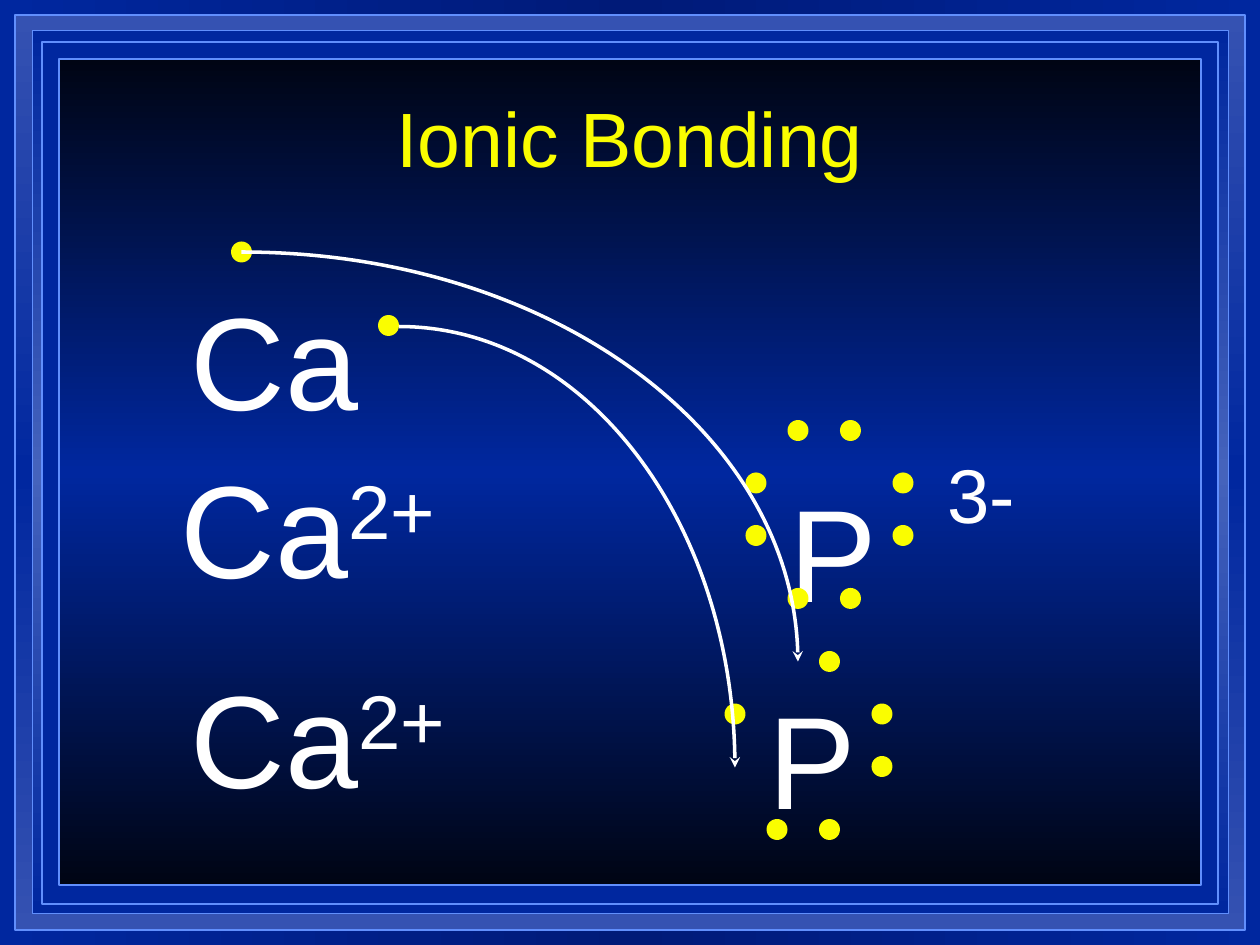
from copy import deepcopy

from lxml import etree
from pptx import Presentation
from pptx.dml.color import RGBColor
from pptx.enum.dml import MSO_PATTERN
from pptx.enum.shapes import MSO_SHAPE
from pptx.enum.text import MSO_ANCHOR, MSO_AUTO_SIZE, PP_ALIGN
from pptx.oxml.ns import qn
from pptx.util import Pt

SCALE = 7620
RECTANGLE, OVAL = MSO_SHAPE.RECTANGLE, MSO_SHAPE.OVAL
PATTERN = MSO_PATTERN.PERCENT_90
CENTER, TOP, GROW = PP_ALIGN.CENTER, MSO_ANCHOR.TOP, MSO_AUTO_SIZE.SHAPE_TO_FIT_TEXT
BLUE, EDGE, YELLOW, WHITE = "00279F", "618FFD", "FAFD00", "FFFFFF"
DOT = 20
CURVE = 0.5523

FRAMES = [
    (14, 14, 1172, 872, ("3552B2", BLUE, "3552B2")),
    (31, 29, 1139, 841, (BLUE, "4563BC", BLUE)),
    (40, 40, 1120, 821, None),
    (56, 56, 1088, 787, ("000514", BLUE, "000514")),
]
LABELS = [
    (170, 260, 200, [("Ca", 0)]),
    (160, 420, 310, [("Ca", 0), ("2+", 30)]),
    (740, 420, 272, [("P  ", 0), ("3-", 60)]),
    (170, 620, 360, [("Ca", 0), ("2+", 30)]),
    (720, 640, 200, [("P", 0)]),
]
OCTET = [(40, 0), (90, 0), (0, 50), (0, 100), (140, 50), (140, 100), (40, 160), (90, 160)]
CALCIUM_ELECTRONS = [(220, 230), (360, 300)]
ION_ORIGIN, ATOM_ORIGIN = (710, 400), (690, 620)
ATOM_GAPS = (0, 3)
TRANSFERS = [(230, 240, 760, 630), (380, 311, 700, 731)]


def px(*lengths):
    """Turn pixel lengths into EMU."""
    return [round(length * SCALE) for length in lengths]


def color(value):
    """Turn a hex string into a colour."""
    return RGBColor.from_string(value)


def apply_format(target, values):
    """Set attributes from a dict of format values."""
    for name, value in values.items():
        setattr(target, name, value)


def fill_gradient(fill, element, colors, angle):
    """Fill with a gradient of evenly spaced colours."""
    fill.gradient()
    fill.gradient_angle = angle
    stops = element.xpath(".//a:gsLst")[0]
    stops.append(deepcopy(stops[0]))
    for index, (stop, value) in enumerate(zip(fill.gradient_stops, colors)):
        stop.position = index / (len(colors) - 1)
        stop.color.rgb = color(value)


def add_frame(slide, left, top, width, height, colors):
    """Add one of the nested border panels."""
    frame = slide.shapes.add_shape(RECTANGLE, *px(left, top, width, height))
    frame.shadow.inherit = False
    if colors:
        fill_gradient(frame.fill, frame._element, colors, 90)
    else:
        frame.fill.patterned()
        frame.fill.pattern = PATTERN
        frame.fill.fore_color.rgb = frame.fill.back_color.rgb = color(BLUE)
    frame.line.color.rgb = color(EDGE)
    frame.line.width = Pt(1)


def add_span(para, text, size, value):
    """Add a run of text in the slide font."""
    span = para.add_run()
    span.text = text
    apply_format(span.font, {"name": "Arial", "size": Pt(size), "bold": False})
    span.font.color.rgb = color(value)
    return span


def format_title(slide):
    """Place the title in front of the frames and format it."""
    title = slide.shapes.title
    slide.shapes._spTree.append(title._element)
    left, top, width, height = px(90, 80, 1020, 100)
    apply_format(title, {"left": left, "top": top, "width": width, "height": height})
    apply_format(title.text_frame, {"vertical_anchor": TOP, "word_wrap": True, "auto_size": GROW})
    para = title.text_frame.paragraphs[0]
    para.alignment = CENTER
    add_span(para, "Ionic Bonding", 44, YELLOW)


def add_label(slide, left, top, width, parts):
    """Add an element symbol with an optional raised charge."""
    box = slide.shapes.add_textbox(*px(left, top, width, 162))
    apply_format(box.text_frame, {"word_wrap": True, "auto_size": GROW})
    para = box.text_frame.paragraphs[0]
    spacing = etree.SubElement(para._p.get_or_add_pPr(), qn("a:spcBef"))
    etree.SubElement(spacing, qn("a:spcPct"), val="50000")
    for text, rise in parts:
        span = add_span(para, text, 75, WHITE)
        if rise:
            span.font._element.set("baseline", str(rise * 1000))


def add_electron(slide, left, top):
    """Add one electron dot."""
    dot = slide.shapes.add_shape(OVAL, *px(left, top, DOT, DOT))
    dot.shadow.inherit = False
    dot.fill.solid()
    dot.fill.fore_color.rgb = color(YELLOW)
    dot.line.fill.background()


def add_octet(slide, origin, gaps=()):
    """Add a ring of electrons, leaving out the gaps."""
    for index, (across, down) in enumerate(OCTET):
        if index not in gaps:
            add_electron(slide, origin[0] + across, origin[1] + down)


def add_transfer(slide, left, top, right, bottom):
    """Add a quarter-ellipse arrow from top left to bottom right."""
    first = (left + (right - left) * CURVE, top)
    second = (right, bottom - (bottom - top) * CURVE)
    builder = slide.shapes.build_freeform(*px(left, top))
    builder.add_line_segments([px(*point) for point in (first, second, (right, bottom))], close=False)
    arrow = builder.convert_to_shape()
    arrow.shadow.inherit = False
    arrow.fill.background()
    arrow.line.color.rgb = color(WHITE)
    arrow.line.width = Pt(2)
    etree.SubElement(arrow.line._get_or_add_ln(), qn("a:tailEnd"), type="stealth")
    outline = arrow._element.xpath(".//a:path")[0]
    bend = etree.SubElement(outline, qn("a:cubicBezTo"))
    for segment in outline.findall(qn("a:lnTo")):
        bend.append(segment[0])
        outline.remove(segment)


def main():
    """Build the slide and save the deck."""
    deck = Presentation()
    deck.slide_width, deck.slide_height = px(1200, 900)
    slide = deck.slides.add_slide(deck.slide_layouts[5])
    fill_gradient(slide.background.fill, slide._element, (BLUE, "001A78", BLUE), 0)
    for frame in FRAMES:
        add_frame(slide, *frame)
    format_title(slide)
    for label in LABELS:
        add_label(slide, *label)
    add_octet(slide, ION_ORIGIN)
    add_octet(slide, ATOM_ORIGIN, ATOM_GAPS)
    for electron in CALCIUM_ELECTRONS:
        add_electron(slide, *electron)
    for transfer in TRANSFERS:
        add_transfer(slide, *transfer)
    deck.save("out.pptx")


if __name__ == "__main__":
    main()
